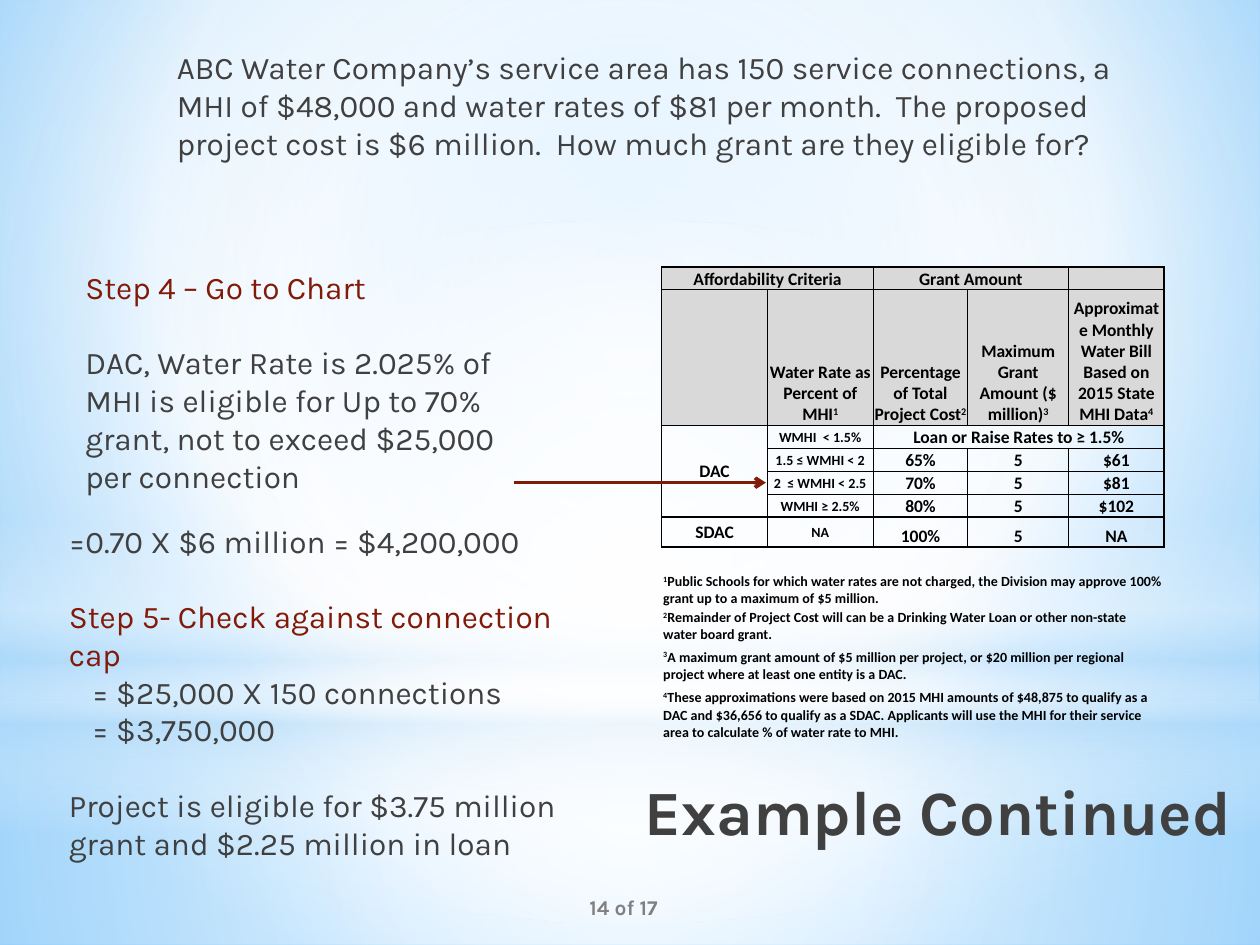
import pptx
import pptx.util
import pptx.dml.color
import pptx.enum.shapes
import pptx.enum.text
import pptx.oxml.ns
from lxml import etree

Cm = pptx.util.Cm
Pt = pptx.util.Pt
RGB = pptx.dml.color.RGBColor
qn = pptx.oxml.ns.qn
Align = pptx.enum.text.PP_ALIGN
Anchor = pptx.enum.text.MSO_ANCHOR
Fit = pptx.enum.text.MSO_AUTO_SIZE
Kind = pptx.enum.shapes.MSO_SHAPE

BLACK = RGB(0, 0, 0)
DARK = RGB(0x40, 0x40, 0x40)
GRAY = RGB(0x80, 0x80, 0x80)
PALE = RGB(0xD9, 0xD9, 0xD9)
RED = RGB(0x82, 0x1A, 0x08)
WHITE = RGB(0xFF, 0xFF, 0xFF)
MIST = RGB(0xB4, 0xDC, 0xFA)
SKY = RGB(0x9E, 0xD5, 0xFF)
BLUE = RGB(0x5B, 0xB9, 0xFF)

COLS = [2.13, 2.13, 1.91, 2.03, 1.93]
ROWS = [0.46, 2.74, 0.46, 0.46, 0.46, 0.46, 0.61, 0.43, 0.79, 0.71, 0.81, 1.17]
GRID = 7
LINES = [1, 1, 1, 0.5, 0.5, 0.5, 1, 1]
SPANS = {(0, 0): (1, 2), (0, 2): (1, 2), (2, 0): (4, 1), (2, 2): (1, 3),
         **{(row, 0): (1, 5) for row in range(8, 12)}}
CELLS = [
    ["Affordability Criteria", "", "Grant Amount"],
    ["", "Water Rate as Percent of MHI^1", "Percentage of Total Project Cost^2",
     "Maximum Grant Amount ($ million)^3",
     "Approximate Monthly Water Bill Based on 2015 State MHI Data^4"],
    ["DAC", "WMHI  < 1.5%", "Loan or Raise Rates to ≥ 1.5%"],
    ["", "1.5 ≤ WMHI < 2", "65%", "5", "$61"],
    ["", "2  ≤ WMHI < 2.5", "70%", "5", "$81"],
    ["", "WMHI ≥ 2.5%", "80%", "5", "$102"],
    ["SDAC", "NA", "100%", "5", "NA"],
    [],
    ["^1^Public Schools for which water rates are not charged, the Division may "
     "approve 100% grant up to a maximum of $5 million."],
    ["^2^Remainder of Project Cost will can be a Drinking Water Loan or other "
     "non-state water board grant."],
    ["^3^A maximum grant amount of $5 million per project, or $20 million per "
     "regional project where at least one entity is a DAC."],
    ["^4^These approximations were based on 2015 MHI amounts of $48,875 to qualify "
     "as a DAC and $36,656 to qualify as a SDAC. Applicants will use the MHI for "
     "their service area to calculate % of water rate to MHI."],
]


def blend(fill, node, stops, rect=None):
    """Set a gradient of (place, colour, alpha) stops, round if rect is given."""
    fill.gradient()
    grad = next(node.iter(qn("a:gradFill")))
    grad.clear()
    grad.set("rotWithShape", "1")
    group = etree.SubElement(grad, qn("a:gsLst"))
    for place, color, alpha in stops:
        stop = etree.SubElement(group, qn("a:gs"), pos=str(place * 1000))
        tint = etree.SubElement(stop, qn("a:srgbClr"), val=str(color))
        etree.SubElement(tint, qn("a:alpha"), val=str(alpha * 1000))
    if rect:
        track = etree.SubElement(grad, qn("a:path"))
        track.set("path", "circle")
        sides = {side: str(part * 1000) for side, part in zip("ltrb", rect)}
        etree.SubElement(track, qn("a:fillToRect"), **sides)
    else:
        etree.SubElement(grad, qn("a:lin"), ang="5400000", scaled="0")


def place(shape, box):
    """Move a shape to a box given in centimetres."""
    shape.left, shape.top, shape.width, shape.height = map(Cm, box)


def style(para, text, size, color, bold=False, font="Karla"):
    """Fill a paragraph and set its font; a caret toggles superscript."""
    for turn, piece in enumerate(text.split("^")):
        if piece:
            run = para.add_run()
            run.text = piece
            if turn % 2:
                run.font.size = Pt(size)
                run.font.element.set("baseline", "30000") if hasattr(
                    run.font, "element") else run._r.get_or_add_rPr().set("baseline", "30000")
    para.font.name = font
    para.font.size = Pt(size)
    para.font.bold = bold
    para.font.color.rgb = color


def add_back(slide, box):
    """Paint the sky and its soft layers behind everything else."""
    left, top, width, height = box
    blend(slide.background.fill, slide.element,
          [(0, SKY, 100), (60, WHITE, 100), (100, BLUE, 100)], (20, 10, 20, 60))
    mid = (50, 50, 50, 50)
    band = [(0, WHITE, 0), (29, WHITE, 30), (45, MIST, 40),
            (55, WHITE, 26), (65, MIST, 60), (100, WHITE, 0)]
    split = 14.17
    layers = [
        (Kind.RECTANGLE, split, height - split,
         [(0, WHITE, 91), (37, WHITE, 76), (100, MIST, 79)], mid),
        (Kind.RECTANGLE, 0, split,
         [(0, WHITE, 89), (48, WHITE, 62), (100, MIST, 79)], mid),
        (Kind.RECTANGLE, 10.46, 6.35, band, None),
        (Kind.OVAL, 4.45, split, [(0, WHITE, 100), (56, WHITE, 0)], mid),
    ]
    for index, (kind, drop, tall, stops, rect) in enumerate(layers, 2):
        shape = slide.shapes.add_shape(kind, Cm(left), Cm(top + drop), Cm(width), Cm(tall))
        shape.shadow.inherit = False
        shape.line.fill.background()
        blend(shape.fill, shape.element, stops, rect)
        slide.shapes.element.insert(index, shape.element)


def add_title(slide, box):
    """Set the slide title."""
    title = slide.shapes.title
    place(title, box)
    frame = title.text_frame
    frame.auto_size = Fit.NONE
    frame.vertical_anchor = Anchor.TOP
    para = frame.paragraphs[0]
    para.alignment = Align.RIGHT
    style(para, "Example Continued", 36, DARK, True)


def add_body(slide, box):
    """Set the question in the body placeholder."""
    body = slide.placeholders[1]
    place(body, box)
    body.text_frame.auto_size = Fit.NONE
    para = body.text_frame.paragraphs[0]
    para.space_after = Pt(3)
    style(para, "ABC Water Company’s service area has 150 service connections, a MHI of "
          "$48,000 and water rates of $81 per month.  The proposed project cost is "
          "$6 million.  How much grant are they eligible for?", 18, DARK)
    props = para._p.get_or_add_pPr()
    props.set("marL", str(Cm(0.13)))
    props.set("indent", "0")
    props.insert_element_before(etree.Element(qn("a:buNone")),
                                "a:tabLst", "a:defRPr", "a:extLst")


def add_steps(slide, box, items):
    """Write a text box from (text, colour, space before, indent) items."""
    frame = slide.shapes.add_textbox(*map(Cm, box)).text_frame
    frame.word_wrap = True
    frame.auto_size = Fit.SHAPE_TO_FIT_TEXT
    for index, (text, color, gap, inset) in enumerate(items):
        para = frame.add_paragraph() if index else frame.paragraphs[0]
        para.space_before = Pt(gap)
        style(para, text, 18, color)
        para._p.get_or_add_pPr().set("marL", str(Cm(inset)))


def add_count(slide, box):
    """Write the page count."""
    frame = slide.shapes.add_textbox(*map(Cm, box)).text_frame
    frame.word_wrap = True
    frame.vertical_anchor = Anchor.MIDDLE
    frame.paragraphs[0].alignment = Align.CENTER
    style(frame.paragraphs[0], "14 of 17", 12, GRAY, True)


def add_arrow(slide, box):
    """Draw the arrow to the row that applies."""
    left, top, width, height = box
    arrow = slide.shapes.add_connector(pptx.enum.shapes.MSO_CONNECTOR.STRAIGHT, Cm(left),
                                       Cm(top), Cm(left + width), Cm(top + height))
    arrow.line.color.rgb = RED
    arrow.line.width = Pt(2)
    etree.SubElement(arrow.line._get_or_add_ln(), qn("a:tailEnd"), type="arrow")
    etree.SubElement(arrow.element.spPr, qn("a:effectLst"))


def edge(cell, widths):
    """Set left, right, top and bottom cell lines in points, 0 for none."""
    props = cell._tc.get_or_add_tcPr()
    for side, width in zip("LRTB", widths):
        line = etree.SubElement(props, qn("a:ln" + side), w=str(Pt(width)))
        if width:
            fill = etree.SubElement(line, qn("a:solidFill"))
            etree.SubElement(fill, qn("a:srgbClr"), val=str(BLACK))
        else:
            etree.SubElement(line, qn("a:noFill"))


def add_chart(slide, box):
    """Build the grant table with its footnotes."""
    table = slide.shapes.add_table(len(ROWS), len(COLS), *map(Cm, box)).table
    table.first_row = table.horz_banding = False
    for col, width in zip(table.columns, COLS):
        col.width = Cm(width)
    for row, height in zip(table.rows, ROWS):
        row.height = Cm(height)
    for r, texts in enumerate(CELLS):
        for c in range(len(COLS)):
            cell = table.cell(r, c)
            high, wide = SPANS.get((r, c), (1, 1))
            if r < GRID:
                edge(cell, (0.5 if c else 1, 1 if c + wide == len(COLS) else 0.5,
                            LINES[r], LINES[r + high]))
            else:
                edge(cell, (0, 0, 1 if r == GRID else 0, 0))
            if r < 2:
                cell.fill.solid()
                cell.fill.fore_color.rgb = PALE
            else:
                cell.fill.background()
            cell.margin_left = cell.margin_right = cell.margin_top = Cm(0.03)
            cell.margin_bottom = 0
            label = 1 < r < GRID and c < 2
            cell.vertical_anchor = Anchor.MIDDLE if label else Anchor.BOTTOM
            para = cell.text_frame.paragraphs[0]
            para.alignment = Align.CENTER if r < GRID else Align.LEFT
            small = r >= GRID or (r > 1 and c == 1)
            text = texts[c] if c < len(texts) else ""
            style(para, text, 8 if small else 10, BLACK, True, "Calibri")
            if not text:
                etree.SubElement(para._p, qn("a:endParaRPr"), sz="800")
    for (r, c), (high, wide) in SPANS.items():
        table.cell(r, c).merge(table.cell(r + high - 1, c + wide - 1))


def main():
    """Build and save the slide."""
    deck = pptx.Presentation()
    deck.slide_width, deck.slide_height = Cm(25.4), Cm(19.05)
    slide = deck.slides.add_slide(deck.slide_layouts[1])
    add_back(slide, (0, 0, 25.4, 19.05))
    add_title(slide, (6.99, 15.44, 18.08, 3.18))
    add_body(slide, (3.18, 0.84, 20.32, 13.77))
    add_steps(slide, (1.47, 5.28, 8.89, 4.88), [
        ("Step 4 – Go to Chart", RED, 0, 0),
        ("DAC, Water Rate is 2.025% of MHI is eligible for Up to 70% grant, "
         "not to exceed $25,000 per connection", DARK, 21.5, 0)])
    add_steps(slide, (1.14, 10.39, 10.92, 7.19), [
        ("=0.70 X $6 million = $4,200,000", DARK, 0, 0),
        ("Step 5- Check against connection cap", RED, 21.5, 0),
        ("= $25,000 X 150 connections", DARK, 0, 0.47),
        ("= $3,750,000", DARK, 0, 0.47),
        ("Project is eligible for $3.75 million grant and $2.25 million in loan",
         DARK, 21.5, 0)])
    add_count(slide, (10.03, 17.78, 5.08, 1.02))
    add_chart(slide, (13.34, 5.38, 10.16, 9.53))
    add_arrow(slide, (10.36, 9.73, 5.08, 0))
    deck.save("out.pptx")


if __name__ == "__main__":
    main()
